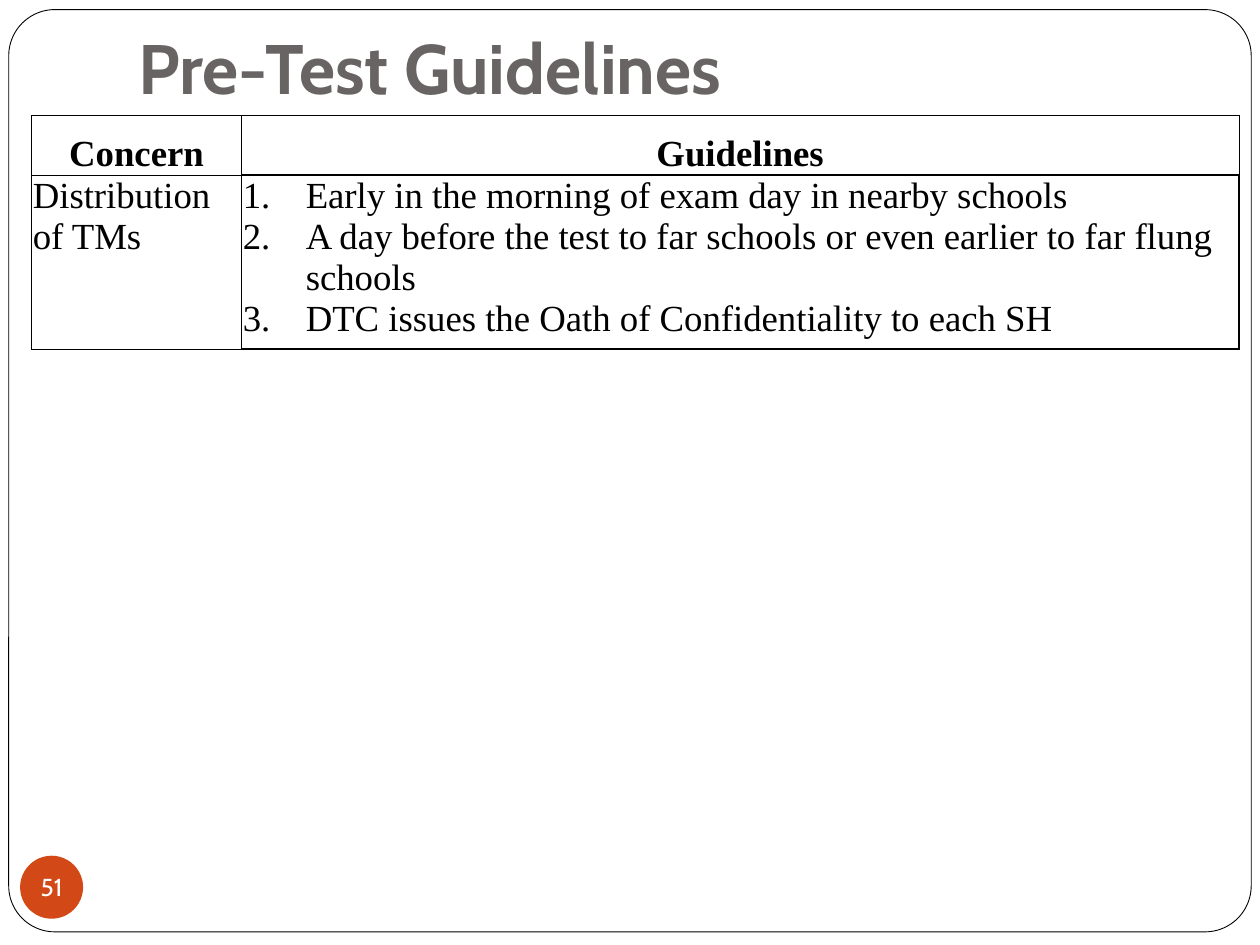
from lxml.etree import SubElement
from pptx import Presentation
from pptx.dml.color import RGBColor
from pptx.enum.shapes import MSO_SHAPE as Shape
from pptx.enum.text import MSO_ANCHOR as Anchor, MSO_AUTO_SIZE as AutoSize, PP_ALIGN as Align
from pptx.oxml.ns import qn
from pptx.util import Pt

COLORS = {"paper": "FFFFFF", "ink": "000000", "title": "696464", "accent": "D34817"}
HEADERS = ["Concern", "Guidelines"]
CONCERN = "Distribution of TMs"
GUIDELINES = [
    "Early in the morning of exam day in nearby schools",
    "A day before the test to far schools or even earlier to far flung schools",
    "DTC issues the Oath of Confidentiality to each SH",
]


class SlideBuilder:
    heading_font = "Cabin"
    table_font = "Times New Roman"

    def __init__(self, presentation):
        self.slide = presentation.slides.add_slide(presentation.slide_layouts[5])

    def color(self, name):
        return RGBColor.from_string(COLORS[name])

    def format_text(self, text_frame, font, size, color, bold=False, align=Align.LEFT):
        for paragraph in text_frame.paragraphs:
            paragraph.alignment = align
            for run in paragraph.runs:
                run.font.name = font
                run.font.size = Pt(size)
                run.font.bold = bold
                run.font.color.rgb = self.color(color)

    def set_margins(self, target, left, top, right, bottom):
        target.margin_left, target.margin_top = Pt(left), Pt(top)
        target.margin_right, target.margin_bottom = Pt(right), Pt(bottom)

    def shape(self, kind, left, top, width, height, fill, line=None):
        shape = self.slide.shapes.add_shape(kind, Pt(left), Pt(top), Pt(width), Pt(height))
        shape.shadow.inherit = False
        shape.fill.solid()
        shape.fill.fore_color.rgb = self.color(fill)
        if line:
            shape.line.color.rgb = self.color(line)
            shape.line.width = Pt(0.5)
        else:
            shape.line.fill.background()
        return shape

    def frame(self, left, top, width, height):
        frame = self.shape(Shape.ROUNDED_RECTANGLE, left, top, width, height, "paper", "ink")
        frame.adjustments[0] = 0.05
        self.slide.shapes.title.element.addprevious(frame.element)

    def title(self, text, left, top, width, height):
        title = self.slide.shapes.title
        title.left, title.top, title.width, title.height = Pt(left), Pt(top), Pt(width), Pt(height)
        text_frame = title.text_frame
        text_frame.text = text
        text_frame.auto_size = AutoSize.NONE
        text_frame.vertical_anchor = Anchor.BOTTOM
        self.set_margins(text_frame, 7.2, 3.6, 7.2, 7.2)
        self.format_text(text_frame, self.heading_font, 40, "title", bold=True)

    def page_number(self, text, left, top, size):
        badge = self.shape(Shape.OVAL, left, top, size, size, "accent")
        text_frame = badge.text_frame
        text_frame.text = text
        text_frame.word_wrap = False
        text_frame.vertical_anchor = Anchor.MIDDLE
        self.set_margins(text_frame, 0, 0, 0, 0)
        self.format_text(text_frame, self.heading_font, 14, "paper", align=Align.CENTER)

    def borders(self, cell, widths):
        properties = cell._tc.get_or_add_tcPr()
        for position, (side, width) in enumerate(zip("LRTB", widths)):
            line = properties.makeelement(qn(f"a:ln{side}"), {"w": str(Pt(width))})
            fill = SubElement(line, qn("a:solidFill"))
            SubElement(fill, qn("a:srgbClr"), val=COLORS["ink"])
            properties.insert(position, line)

    def number(self, paragraph, indent):
        properties = paragraph._p.get_or_add_pPr()
        properties.set("marL", str(Pt(indent)))
        properties.set("indent", str(-Pt(indent)))
        SubElement(properties, qn("a:buFont"), typeface=self.table_font)
        SubElement(properties, qn("a:buAutoNum"), type="arabicPeriod")

    def cell(self, cell, text, header, widths):
        cell.text = text
        cell.fill.background()
        cell.vertical_anchor = Anchor.BOTTOM if header else Anchor.TOP
        self.set_margins(cell, 0.75, 0.75, 0.75, 0)
        align = Align.CENTER if header else Align.LEFT
        self.format_text(cell.text_frame, self.table_font, 21, "ink", header, align)
        self.borders(cell, widths)

    def table(self, rows, left, top, columns, heights, border_widths):
        table = self.slide.shapes.add_table(
            len(rows), len(columns), Pt(left), Pt(top), Pt(sum(columns)), Pt(sum(heights))
        ).table
        table.first_row = table.horz_banding = False
        for column, width in zip(table.columns, columns):
            column.width = Pt(width)
        for row, height in zip(table.rows, heights):
            row.height = Pt(height)
        for row_index, texts in enumerate(rows):
            for column_index, text in enumerate(texts):
                self.cell(table.cell(row_index, column_index), text, row_index == 0,
                          border_widths[row_index][column_index])
        return table


def main():
    presentation = Presentation()
    presentation.slide_width, presentation.slide_height = Pt(720), Pt(540)
    builder = SlideBuilder(presentation)
    builder.frame(5, 5.5, 710, 527)
    builder.title("Pre-Test Guidelines", 72, 6.5, 612, 62.5)
    builder.page_number("51", 11.5, 489, 36)
    thin, thick = [0.5] * 4, [1] * 4
    table = builder.table(
        [HEADERS, [CONCERN, "\n".join(GUIDELINES)]],
        18, 66, [120, 570], [34, 99.5],
        [[thin, [0.5, 0.5, 0.5, 1]], [[0.5, 1, 0.5, 0.5], thick]],
    )
    for paragraph in table.cell(1, 1).text_frame.paragraphs:
        builder.number(paragraph, 36)
    presentation.save("out.pptx")


if __name__ == "__main__":
    main()
